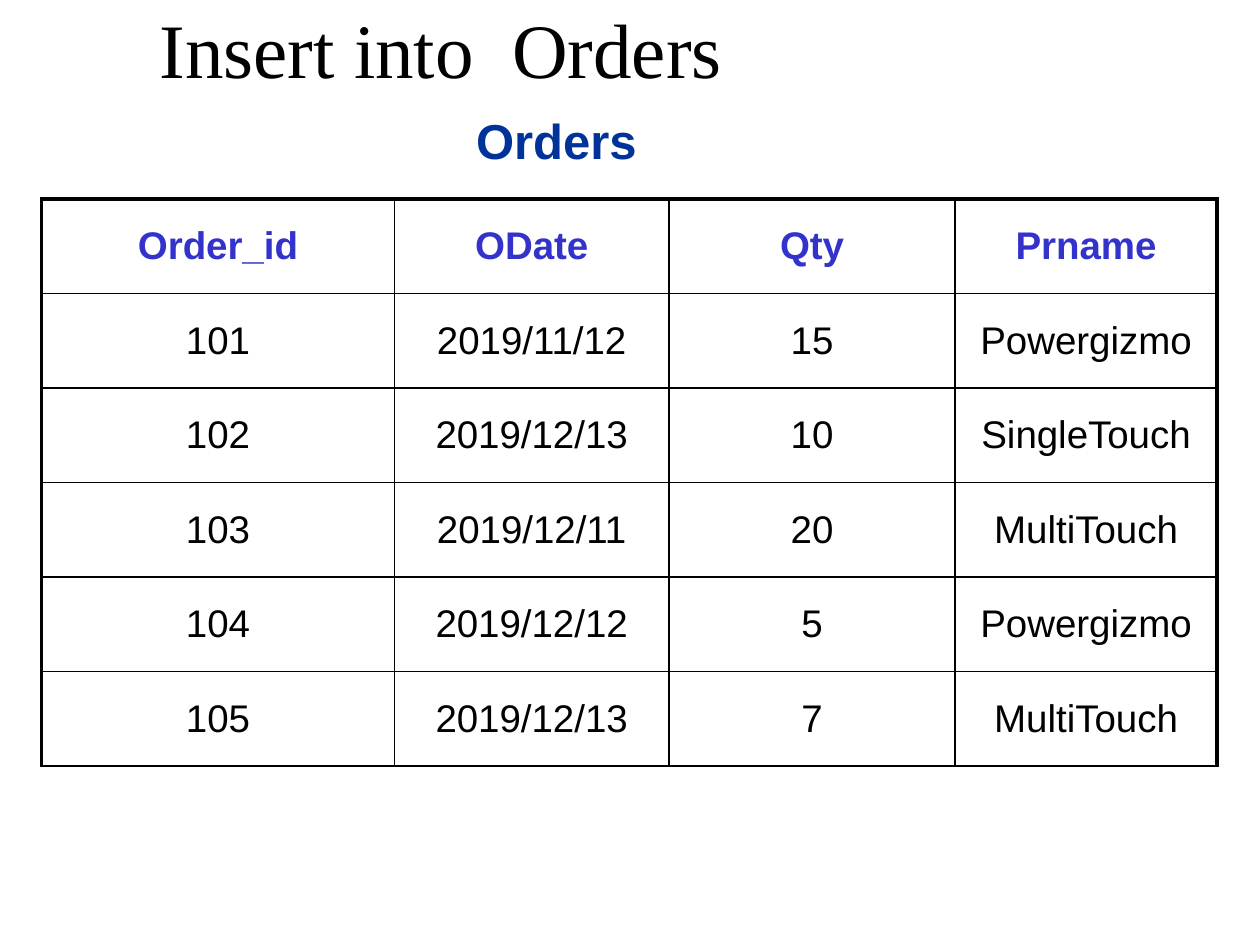
from lxml import etree
from pptx import Presentation
from pptx.dml.color import RGBColor
from pptx.enum.text import MSO_ANCHOR, PP_ALIGN
from pptx.oxml.ns import qn
from pptx.util import Inches, Pt

CENTER, LEFT = PP_ALIGN.CENTER, PP_ALIGN.LEFT
MIDDLE, TOP = MSO_ANCHOR.MIDDLE, MSO_ANCHOR.TOP

COLORS = {"text": "000000", "caption": "003399", "header": "3333CC", "border": "000000"}
OUTER_LINE, INNER_LINE = 2.25, 1
COLUMN_WIDTHS = [2.8, 2.18, 2.27, 2.08]
ROW_HEIGHT = 0.75
ORDERS = [
    ["Order_id", "ODate", "Qty", "Prname"],
    ["101", "2019/11/12", "15", "Powergizmo"],
    ["102", "2019/12/13", "10", "SingleTouch"],
    ["103", "2019/12/11", "20", "MultiTouch"],
    ["104", "2019/12/12", "5", "Powergizmo"],
    ["105", "2019/12/13", "7", "MultiTouch"],
]


def write_text(text_frame, text, size, font="Arial", color="text", bold=False,
               align=CENTER, space_before=0):
    """Write one formatted paragraph into a text frame."""
    paragraph = text_frame.paragraphs[0]
    paragraph.alignment = align
    paragraph.space_before = Pt(space_before)
    run = paragraph.add_run()
    run.text = text
    run.font.size = Pt(size)
    run.font.name = font
    run.font.bold = bold
    run.font.color.rgb = RGBColor.from_string(COLORS[color])


def add_label(slide, box, text, anchor=TOP, wrap=True, **text_format):
    """Add a text box that fills the given box."""
    text_frame = slide.shapes.add_textbox(*map(Inches, box)).text_frame
    text_frame.word_wrap = wrap
    text_frame.vertical_anchor = anchor
    write_text(text_frame, text, **text_format)


def set_borders(cell, widths):
    """Draw the sides of a cell, given a line width in points for each."""
    properties = cell._tc.get_or_add_tcPr()
    for side, width in widths.items():
        line = etree.SubElement(properties, qn(f"a:ln{side}"), w=str(Pt(width)))
        fill = etree.SubElement(line, qn("a:solidFill"))
        etree.SubElement(fill, qn("a:srgbClr"), val=COLORS["border"])


def add_orders_table(slide, left, top, rows):
    """Add the orders table with heavy left, top and right edges."""
    last_column = len(COLUMN_WIDTHS) - 1
    size = sum(COLUMN_WIDTHS), ROW_HEIGHT * len(rows)
    table = slide.shapes.add_table(
        len(rows), len(COLUMN_WIDTHS), *map(Inches, (left, top, *size))).table
    table.first_row = table.horz_banding = False
    for column, width in zip(table.columns, COLUMN_WIDTHS):
        column.width = Inches(width)
    for row_index, values in enumerate(rows):
        is_header = row_index == 0
        for column_index, value in enumerate(values):
            cell = table.cell(row_index, column_index)
            cell.vertical_anchor = MIDDLE
            set_borders(cell, {
                "L": OUTER_LINE if column_index == 0 else INNER_LINE,
                "R": OUTER_LINE if column_index == last_column else INNER_LINE,
                "T": OUTER_LINE if is_header else INNER_LINE,
                "B": INNER_LINE,
            })
            cell.fill.background()
            write_text(cell.text_frame, value, size=22, bold=is_header,
                       color="header" if is_header else "text", space_before=4.4)


def main():
    """Build the slide and save it."""
    presentation = Presentation()
    presentation.slide_width, presentation.slide_height = Inches(10), Inches(7.5)
    slide = presentation.slides.add_slide(presentation.slide_layouts[6])
    add_label(slide, (-0.75, -0.25, 8.5, 1.25), "Insert into  Orders",
              anchor=MIDDLE, size=44, font="Times New Roman")
    add_label(slide, (3.68, 0.83, 1.49, 0.57), "Orders", wrap=False,
              size=28, color="caption", bold=True, align=LEFT)
    add_orders_table(slide, 0.33, 1.58, ORDERS)
    presentation.save("out.pptx")


if __name__ == "__main__":
    main()
